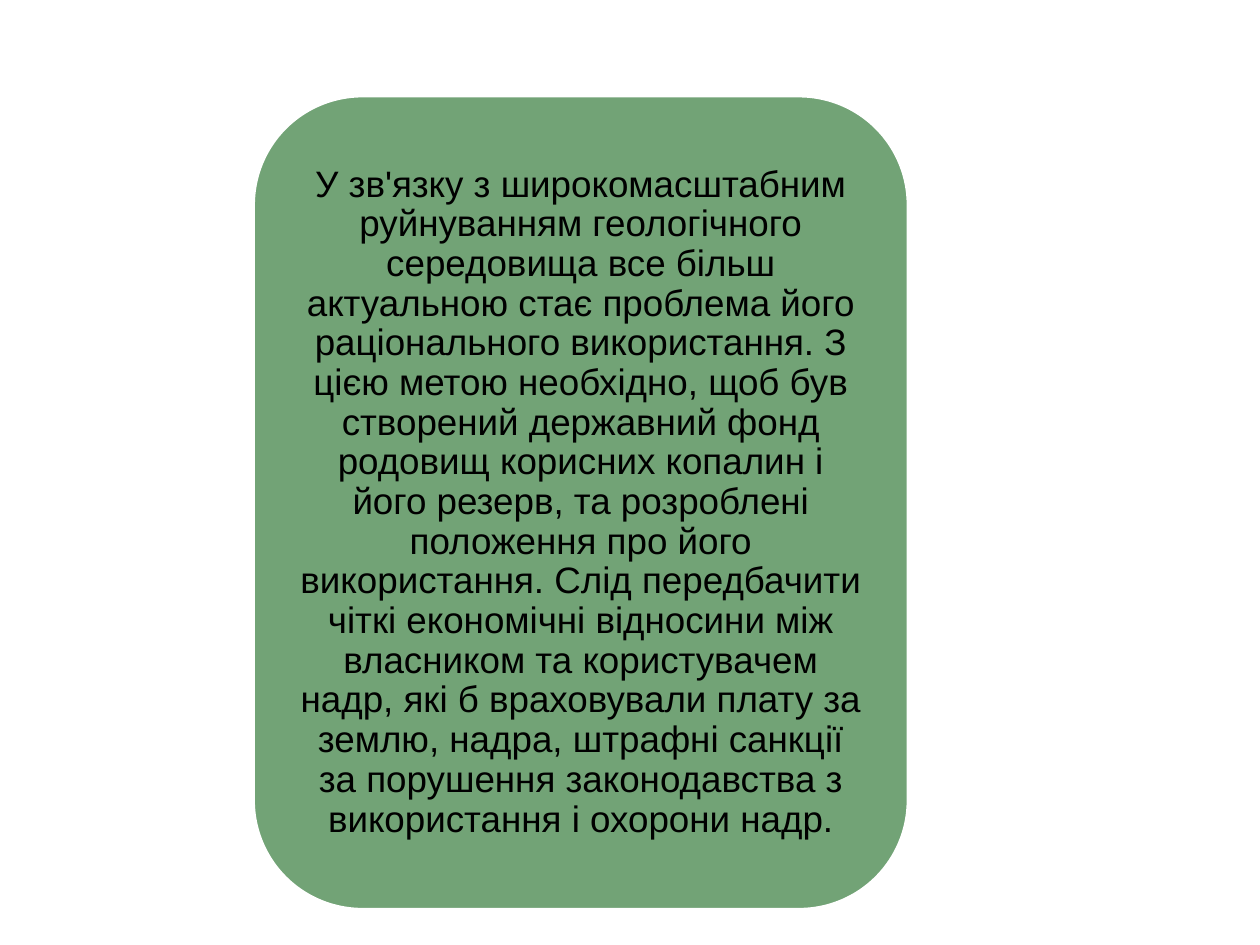
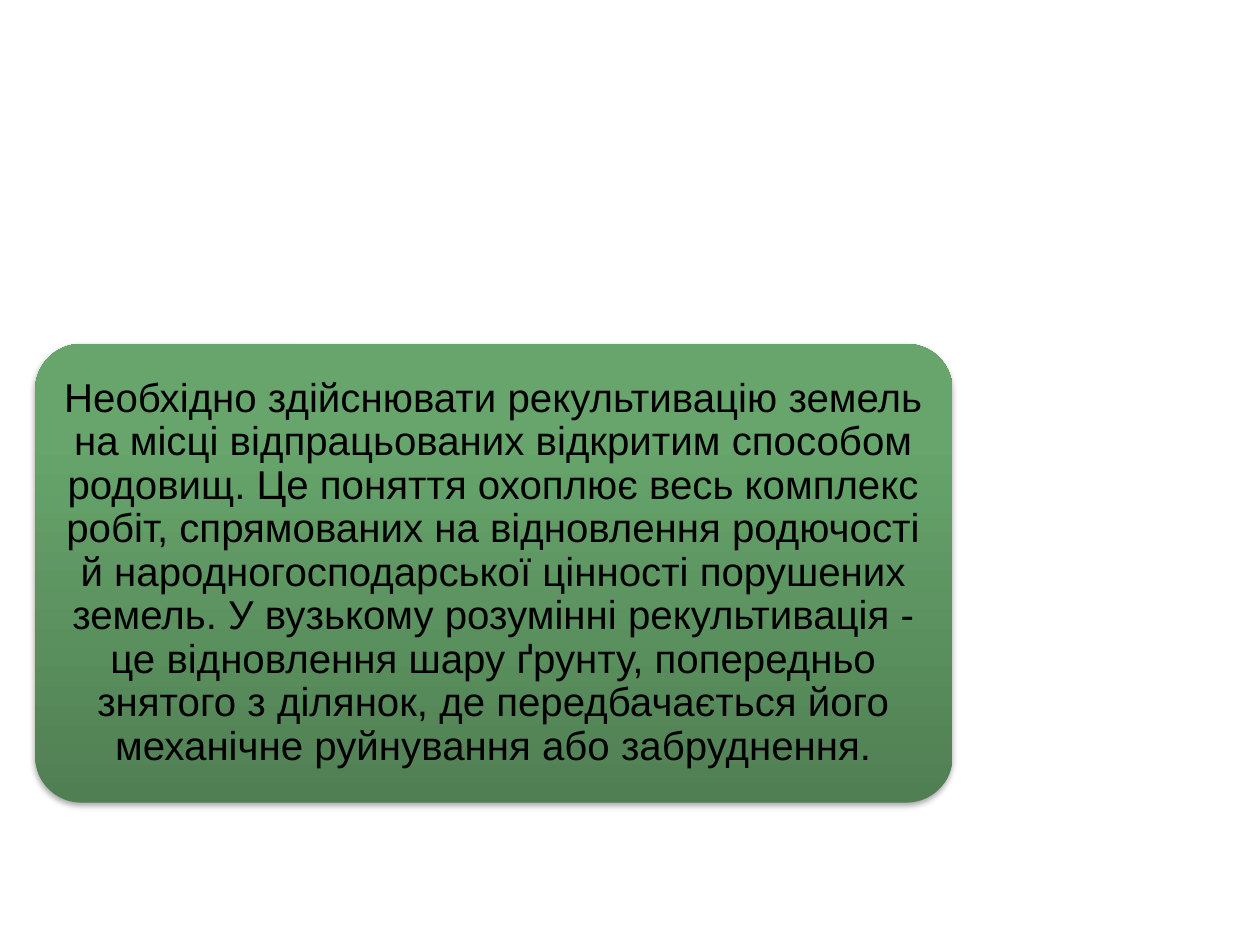
"""Build two slides, each with one rounded green card of text on land and mineral use."""
from copy import deepcopy

from lxml import etree
from pptx import Presentation, util as u
from pptx.dml.color import RGBColor
from pptx.enum import shapes, text
from pptx.oxml import ns

COLOURS = {
    "card": "72A376",
    "outline": "FFFFFF",
    "text": "000000",
    "shadow": "000000",
    "gradient dark": "507F53",
    "gradient middle": "67A56C",
    "gradient light": "67A76C",
}
FONT = "Arial"

MINERAL_FUND = (
    "У зв'язку з широкомасштабним руйнуванням геологічного середовища все більш "
    "актуальною стає проблема його раціонального використання. З цією метою необхідно, "
    "щоб був створений державний фонд родовищ корисних копалин і його резерв, та розроблені "
    "положення про його використання. Слід передбачити чіткі економічні відносини між "
    "власником та користувачем надр, які б враховували плату за землю, надра, штрафні "
    "санкції за порушення законодавства з використання і охорони надр."
)
RECULTIVATION = (
    "Необхідно здійснювати рекультивацію земель на місці відпрацьованих відкритим способом "
    "родовищ. Це поняття охоплює весь комплекс робіт, спрямованих на відновлення родючості "
    "й народногосподарської цінності порушених земель. У вузькому розумінні рекультивація - "
    "це відновлення шару ґрунту, попередньо знятого з ділянок, де передбачається його "
    "механічне руйнування або забруднення."
)


def colour(name):
    """Return the named colour of the palette."""
    return RGBColor.from_string(COLOURS[name])


def add_card(slide, words, *, box, corner, size, margins):
    """Add a rounded card with centred text and return its shape."""
    shape = slide.shapes.add_shape(
        shapes.MSO_SHAPE.ROUNDED_RECTANGLE, *[u.Inches(length) for length in box])
    shape.adjustments[0] = corner
    shape.shadow.inherit = False
    frame = shape.text_frame
    frame.word_wrap = True
    frame.vertical_anchor = text.MSO_ANCHOR.MIDDLE
    frame.margin_left = frame.margin_right = u.Inches(margins[0])
    frame.margin_top = frame.margin_bottom = u.Inches(margins[1])
    paragraph = frame.paragraphs[0]
    paragraph.text = words
    paragraph.alignment = text.PP_ALIGN.CENTER
    paragraph.line_spacing = 0.9
    paragraph.font.name = FONT
    paragraph.font.size = u.Pt(size)
    paragraph.font.color.rgb = colour("text")
    return shape


presentation = Presentation()
presentation.slide_width, presentation.slide_height = u.Inches(10), u.Inches(7.5)
blank_layout = presentation.slide_layouts[6]

fund_slide = presentation.slides.add_slide(blank_layout)
fund_card = add_card(fund_slide, MINERAL_FUND, box=(2.01, 0.76, 5.2, 6.46),
                     corner=0.1667, size=21, margins=(0.09, 0.04))
fund_card.fill.solid()
fund_card.fill.fore_color.rgb = colour("card")
fund_card.line.color.rgb = colour("outline")
fund_card.line.width = u.Pt(2)

land_slide = presentation.slides.add_slide(blank_layout)
land_card = add_card(land_slide, RECULTIVATION, box=(0.28, 2.73, 7.28, 3.64),
                     corner=0.1, size=23, margins=(0.05, 0.03))
land_card.line.fill.background()
land_card.fill.gradient()
land_card.fill.gradient_angle = 90
properties = land_card._element.spPr
stop_list = properties.find(".//" + ns.qn("a:gsLst"))
stop_list.append(deepcopy(stop_list[0]))
gradient = [(0, "gradient dark"), (0.8, "gradient middle"), (1, "gradient light")]
for stop, (position, name) in zip(land_card.fill.gradient_stops, gradient):
    stop.position = position
    stop.color.rgb = colour(name)

effects = properties.find(ns.qn("a:effectLst"))
shadow = etree.SubElement(
    effects, ns.qn("a:outerShdw"), blurRad=str(u.Pt(3.1)), dist=str(u.Pt(1.8)),
    dir=str(90 * 60000), rotWithShape="0")
shade = etree.SubElement(shadow, ns.qn("a:srgbClr"), val=COLOURS["shadow"])
etree.SubElement(shade, ns.qn("a:alpha"), val="35000")

presentation.save("out.pptx")
